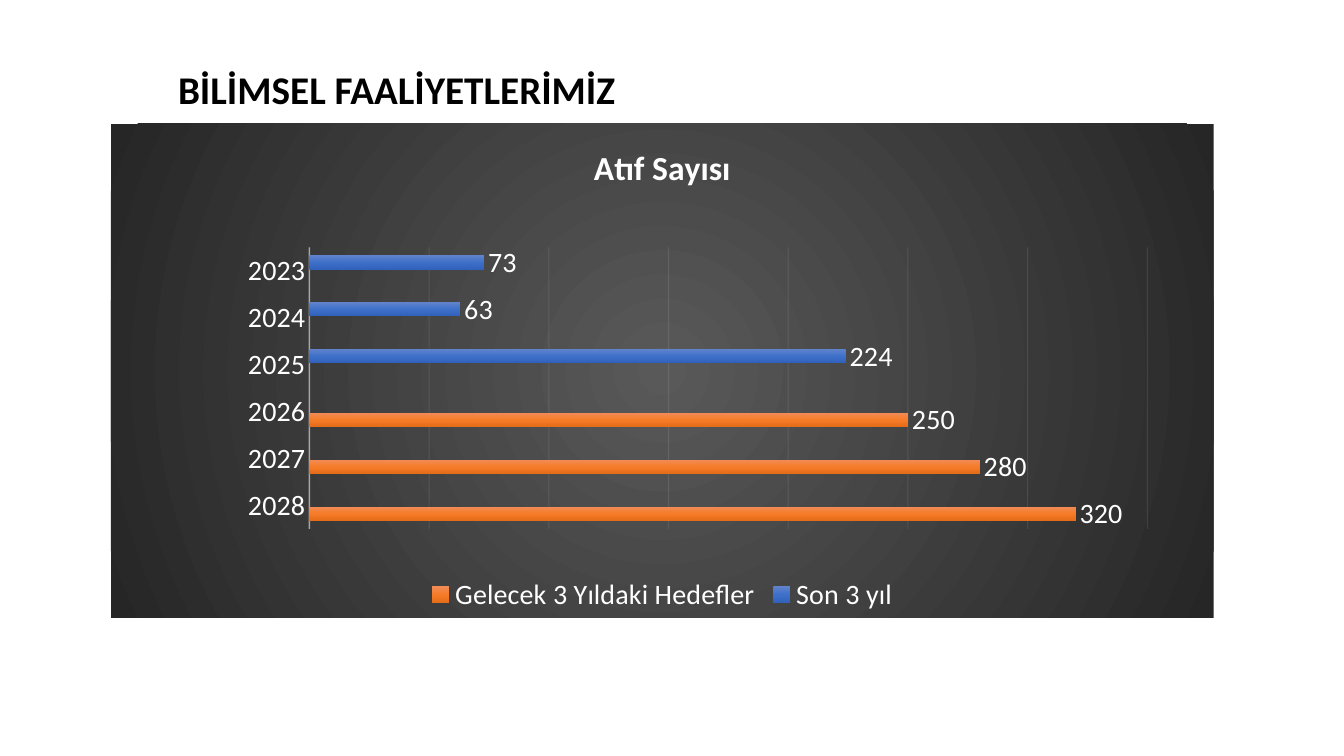
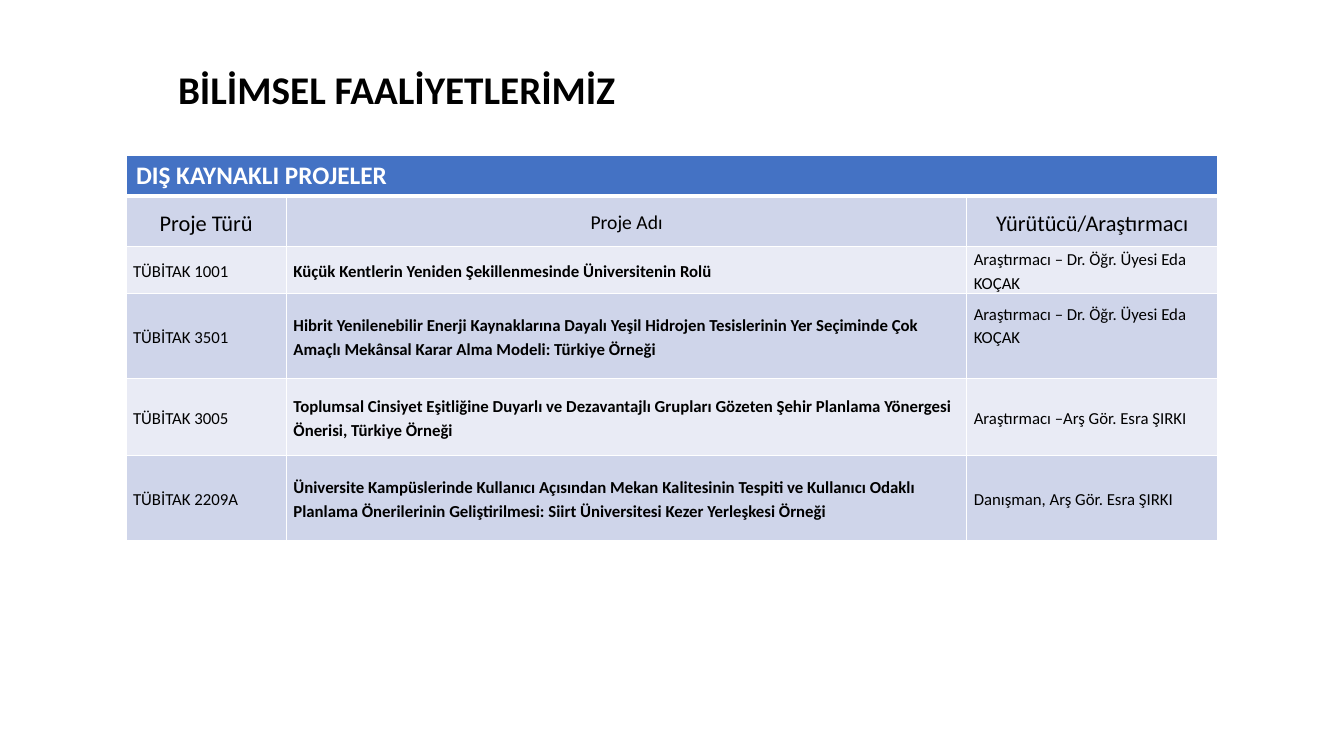
from pptx import Presentation
from pptx.chart.data import CategoryChartData
from pptx.dml.color import RGBColor
from pptx.enum.chart import XL_CHART_TYPE, XL_LABEL_POSITION, XL_LEGEND_POSITION, XL_TICK_MARK
from pptx.enum.text import MSO_ANCHOR, PP_ALIGN
from pptx.oxml import parse_xml
from pptx.oxml.ns import nsdecls, qn
from pptx.util import Inches, Pt

BAR_CLUSTERED = XL_CHART_TYPE.BAR_CLUSTERED
LABEL_OUTSIDE = XL_LABEL_POSITION.OUTSIDE_END
LEGEND_BOTTOM = XL_LEGEND_POSITION.BOTTOM
NO_TICK = XL_TICK_MARK.NONE
MIDDLE, TOP = MSO_ANCHOR.MIDDLE, MSO_ANCHOR.TOP
LEFT, CENTER = PP_ALIGN.LEFT, PP_ALIGN.CENTER

# Shared grid, in units: 160 columns by 90 rows
COLUMNS, ROWS = 160, 90
UNIT = Inches(7.5) / ROWS
TITLE_BOX = (20, 4.8, 97, 12.24)
CHART_BOX = (13.2, 14.76, 131.28, 58.8)
TABLE_BOX = (15, 18.48, 130, 45.4)

# Shared style
FONT = "Calibri"
BLACK, WHITE, PALE_LINE = "000000", "FFFFFF", "F2F2F2"
HEADER_BLUE, BAND_DARK, BAND_LIGHT = "4472C4", "CFD5EA", "E9EBF5"
PANEL_STOPS = [(0, "595959"), (100, "262626")]
BLUE_STOPS = [(0, "6183CB"), (50, "3E70CA"), (100, "3062BB")]
ORANGE_STOPS = [(0, "F18C57"), (50, "F67B28"), (100, "E56C19")]

TITLE = "BİLİMSEL FAALİYETLERİMİZ"
YEARS = ["2023", "2024", "2025", "2026", "2027", "2028"]
CITATIONS = [
    ("Son 3 yıl", [73, 63, 224, None, None, None], BLUE_STOPS),
    ("Gelecek 3 Yıldaki Hedefler", [None, None, None, 250, 280, 320], ORANGE_STOPS),
]
TABLE_TITLE = "DIŞ KAYNAKLI PROJELER"
TABLE_HEADINGS = [("Proje Türü", 16), ("Proje Adı", 14), ("Yürütücü/Araştırmacı", 16)]
PROJECTS = [
    ("TÜBİTAK 1001", "Küçük Kentlerin Yeniden Şekillenmesinde Üniversitenin Rolü",
     "Araştırmacı – Dr. Öğr. Üyesi Eda KOÇAK"),
    ("TÜBİTAK 3501",
     "Hibrit Yenilenebilir Enerji Kaynaklarına Dayalı Yeşil Hidrojen Tesislerinin Yer Seçiminde "
     "Çok Amaçlı Mekânsal Karar Alma Modeli: Türkiye Örneği",
     "Araştırmacı – Dr. Öğr. Üyesi Eda KOÇAK"),
    ("TÜBİTAK 3005",
     "Toplumsal Cinsiyet Eşitliğine Duyarlı ve Dezavantajlı Grupları Gözeten Şehir Planlama "
     "Yönergesi Önerisi, Türkiye Örneği",
     "Araştırmacı –Arş Gör. Esra ŞIRKI"),
    ("TÜBİTAK 2209A",
     "Üniversite Kampüslerinde Kullanıcı Açısından Mekan Kalitesinin Tespiti ve Kullanıcı Odaklı "
     "Planlama Önerilerinin Geliştirilmesi: Siirt Üniversitesi Kezer Yerleşkesi Örneği",
     "Danışman, Arş Gör. Esra ŞIRKI"),
]
COLUMN_WIDTHS = [19.1, 81, 29.9]
ROW_HEIGHTS = [4.7, 6, 5.3, 10.1, 9.2, 10.1]


def color(hex_value):
    return RGBColor.from_string(hex_value)


def units(*lengths):
    return [round(length * UNIT) for length in lengths]


def format_font(font, size, hex_value, bold=False):
    font.name, font.size, font.bold = FONT, Pt(size), bold
    font.color.rgb = color(hex_value)


def write_text(frame, text, size=12, hex_value=BLACK, bold=False, align=LEFT,
               spacing=None, anchor=MIDDLE):
    frame.text = text
    frame.vertical_anchor = anchor
    paragraph = frame.paragraphs[0]
    paragraph.alignment = align
    paragraph.line_spacing = spacing
    format_font(paragraph.runs[0].font, size, hex_value, bold)


def gradient_xml(stops, direction):
    stop_xml = "".join(f'<a:gs pos="{share * 1000}"><a:srgbClr val="{hex_value}"/></a:gs>'
                       for share, hex_value in stops)
    return f'<a:gradFill {nsdecls("a")}><a:gsLst>{stop_xml}</a:gsLst>{direction}</a:gradFill>'


def format_line(line, width, opacity):
    line.width = Pt(width)
    line.color.rgb = color(PALE_LINE)
    rgb = next(line._get_or_add_ln().iter(qn("a:srgbClr")))
    rgb.append(parse_xml(f'<a:alpha {nsdecls("a")} val="{opacity * 1000}"/>'))


def add_titled_slide(presentation):
    slide = presentation.slides.add_slide(presentation.slide_layouts[5])
    title = slide.shapes.title
    title.left, title.top, title.width, title.height = units(*TITLE_BOX)
    write_text(title.text_frame, TITLE, size=28, bold=True, spacing=0.9)
    return slide


def style_panel(chart):
    """Give the chart its radial background and fixed plot area."""
    center = ('<a:path path="circle">'
              '<a:fillToRect l="50000" t="50000" r="50000" b="50000"/></a:path>')
    chart._chartSpace.chart.addnext(parse_xml(
        f'<c:spPr {nsdecls("c", "a")}>{gradient_xml(PANEL_STOPS, center)}'
        '<a:ln><a:noFill/></a:ln></c:spPr>'))
    plot_area = chart._chartSpace.chart.plotArea
    for layout in plot_area.findall(qn("c:layout")):
        plot_area.remove(layout)
    sizes = "".join(f'<c:{key} val="{share}"/>'
                    for key, share in zip("xywh", (0.18, 0.25, 0.76, 0.57)))
    plot_area.insert(0, parse_xml(
        f'<c:layout {nsdecls("c")}><c:manualLayout><c:layoutTarget val="inner"/>'
        f'<c:xMode val="edge"/><c:yMode val="edge"/>{sizes}</c:manualLayout></c:layout>'))


def add_citation_chart(slide, box):
    data = CategoryChartData()
    data.categories = YEARS
    for name, values, _ in CITATIONS:
        data.add_series(name, values)
    chart = slide.shapes.add_chart(BAR_CLUSTERED, *units(*box), data).chart
    format_font(chart.font, 20, WHITE)
    style_panel(chart)

    # Title and legend
    chart.has_title = True
    write_text(chart.chart_title.text_frame, "Atıf Sayısı", size=24, hex_value=WHITE,
               bold=True, align=CENTER)
    chart.chart_title.include_in_layout = False
    chart.has_legend = True
    chart.legend.position = LEGEND_BOTTOM
    chart.legend.include_in_layout = False

    # Axes
    years, counts = chart.category_axis, chart.value_axis
    years.reverse_order = True
    years.major_tick_mark = NO_TICK
    format_line(years.format.line, 1, 54)
    counts.visible = False
    counts.minimum_scale, counts.maximum_scale, counts.major_unit = 0, 350, 50
    counts.has_major_gridlines = True
    format_line(counts.major_gridlines.format.line, 0.75, 10)

    # Bars and their values
    plot = chart.plots[0]
    plot.gap_width, plot.overlap, plot.vary_by_categories = 115, -20, False
    for series, (_, _, stops) in zip(plot.series, CITATIONS):
        properties = series._element.get_or_add_spPr()
        properties.append(parse_xml(gradient_xml(stops, '<a:lin ang="5400000" scaled="0"/>')))
        labels = series.data_labels
        labels.show_value = True
        labels.position = LABEL_OUTSIDE
        format_font(labels.font, 20, WHITE)


def style_cell(cell, fill, bottom_width=1):
    properties = cell._tc.get_or_add_tcPr()
    for side, width in zip("LRTB", (1, 1, 1, bottom_width)):
        properties.append(parse_xml(
            f'<a:ln{side} {nsdecls("a")} w="{Pt(width)}"><a:solidFill>'
            f'<a:srgbClr val="{WHITE}"/></a:solidFill></a:ln{side}>'))
    cell.fill.solid()
    cell.fill.fore_color.rgb = color(fill)


def write_body_cell(cell, text, fill, **text_format):
    style_cell(cell, fill)
    cell.margin_left = cell.margin_right = Inches(0.07)
    cell.margin_top = cell.margin_bottom = 0
    write_text(cell.text_frame, text, spacing=1.15, **text_format)
    cell.vertical_anchor = MIDDLE


def add_project_table(slide, box):
    table = slide.shapes.add_table(len(ROW_HEIGHTS), len(COLUMN_WIDTHS), *units(*box)).table
    table.first_row = table.horz_banding = False
    for column, width in zip(table.columns, units(*COLUMN_WIDTHS)):
        column.width = width
    for row, height in zip(table.rows, units(*ROW_HEIGHTS)):
        row.height = height

    # Merged heading
    for cell in table.rows[0].cells:
        style_cell(cell, HEADER_BLUE, bottom_width=3)
    heading = table.cell(0, 0)
    heading.merge(table.cell(0, len(COLUMN_WIDTHS) - 1))
    write_text(heading.text_frame, TABLE_TITLE, size=18, hex_value=WHITE, bold=True, anchor=TOP)

    # Column headings and projects
    for column, (text, size) in enumerate(TABLE_HEADINGS):
        write_body_cell(table.cell(1, column), text, BAND_DARK, size=size, align=CENTER)
    for row, project in enumerate(PROJECTS, start=2):
        fill = BAND_DARK if row % 2 else BAND_LIGHT
        for column, text in enumerate(project):
            write_body_cell(table.cell(row, column), text, fill, bold=column == 1)
    table.cell(3, 2).margin_bottom = Inches(0.22)  # this name sits above the middle


def main():
    presentation = Presentation()
    presentation.slide_width, presentation.slide_height = units(COLUMNS, ROWS)
    add_citation_chart(add_titled_slide(presentation), CHART_BOX)
    add_project_table(add_titled_slide(presentation), TABLE_BOX)
    presentation.save("out.pptx")


if __name__ == "__main__":
    main()
